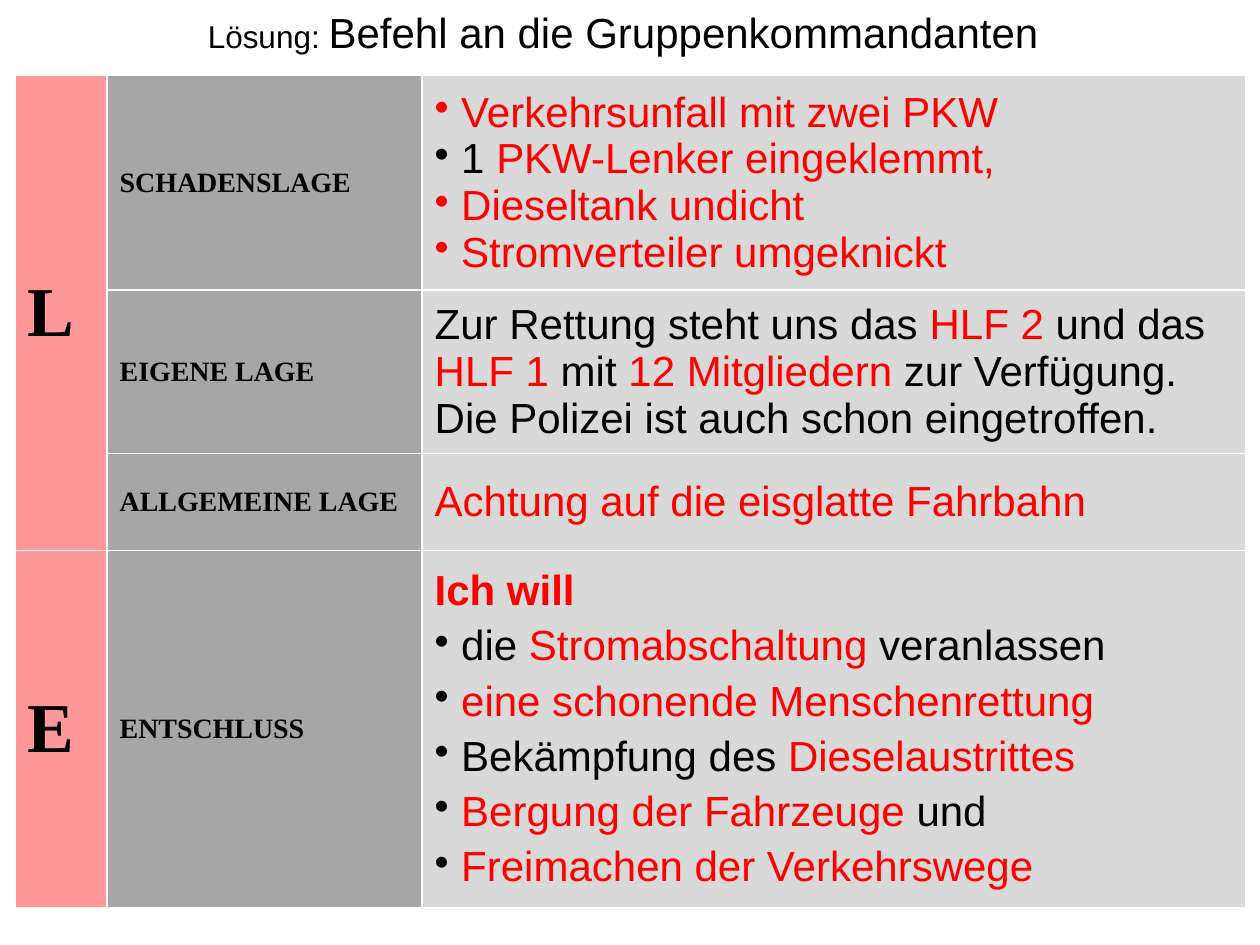
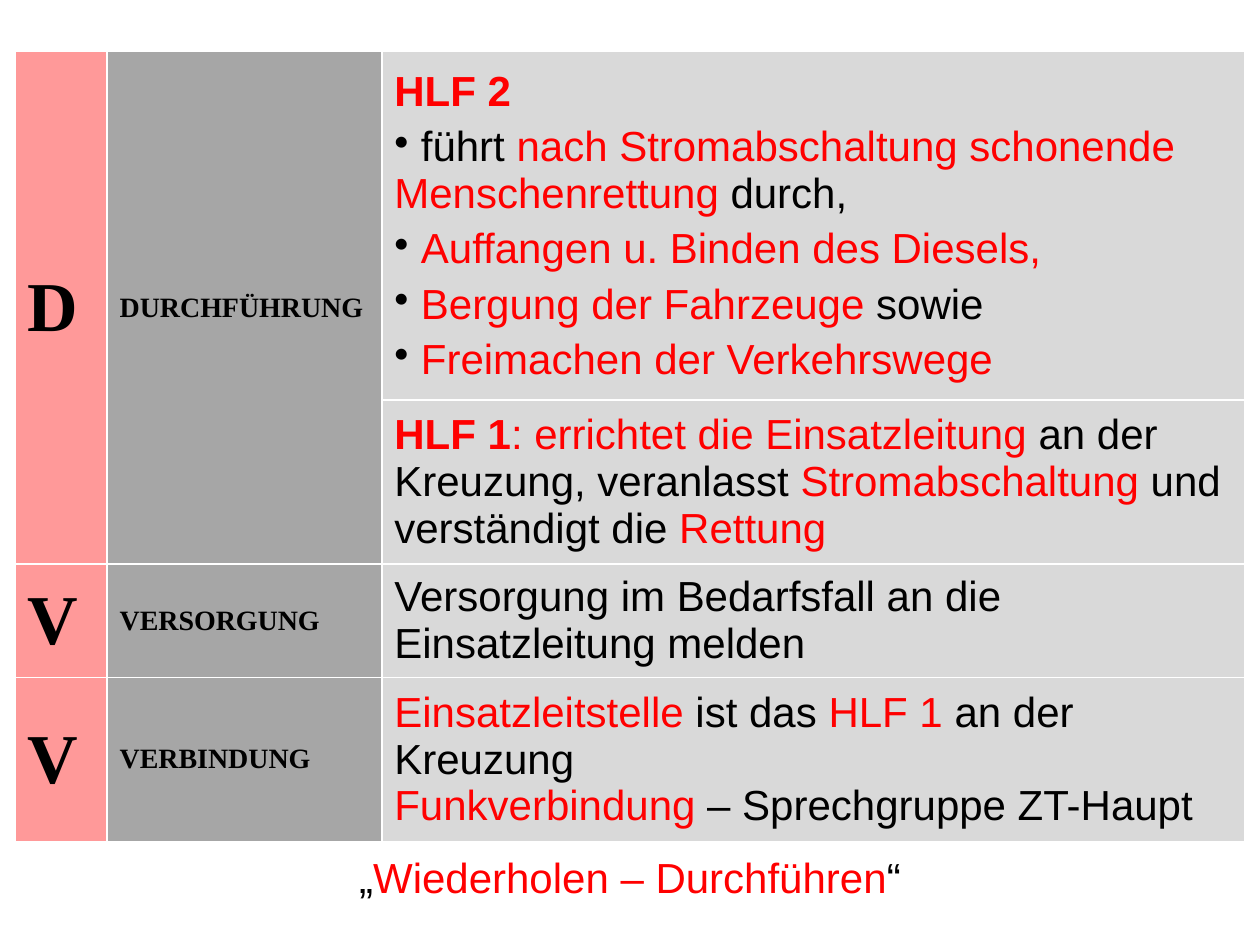
from dataclasses import dataclass

from lxml.etree import SubElement
from pptx import Presentation
from pptx.dml.color import RGBColor
from pptx.enum.text import MSO_ANCHOR, PP_ALIGN
from pptx.oxml import parse_xml
from pptx.oxml.ns import nsdecls, qn
from pptx.util import Inches, Pt


@dataclass(frozen=True)
class Theme:
    black: str = "000000"
    red: str = "FF0000"
    letter_fill: str = "FF9999"
    heading_fill: str = "A6A6A6"
    order_fill: str = "D9D9D9"
    border: str = "FFFFFF"
    border_width: int = Pt(1)
    body_font: str = "Arial"
    heading_font: str = "Times New Roman"
    letter_size: int = Pt(40)
    heading_size: int = Pt(16)
    order_size: int = Pt(24)
    prefix_size: int = Pt(18)
    line_gap: int = Pt(4.8)


@dataclass(frozen=True)
class Line:
    text: str
    bullet: bool = False
    spaced: bool = True


@dataclass(frozen=True)
class Section:
    letter: str
    heading: str
    lines: tuple
    height: float


THEME = Theme()
RED_MARK, BOLD_MARK = "|", "*"

SITUATION = (
    Section("L", "SCHADENSLAGE", (
        Line("| Verkehrsunfall mit zwei PKW", True, False),
        Line(" 1 |PKW-Lenker eingeklemmt,", True, False),
        Line("| Dieseltank undicht", True, False),
        Line("| Stromverteiler umgeknickt", True, False),
    ), 1.7),
    Section("", "EIGENE LAGE", (
        Line("Zur Rettung steht uns das| HLF 2 |und das| HLF 1 |mit| 12 Mitgliedern |"
             "zur Verfügung. Die Polizei ist auch schon eingetroffen."),
    ), 1.3),
    Section("", "ALLGEMEINE LAGE", (
        Line("|Achtung auf die eisglatte Fahrbahn"),
    ), 0.77),
    Section("E", "ENTSCHLUSS", (
        Line("|*Ich will"),
        Line(" die |Stromabschaltung| veranlassen", True),
        Line(" |eine schonende Menschenrettung", True),
        Line(" Bekämpfung des| Dieselaustrittes", True),
        Line(" |Bergung der Fahrzeuge |und", True),
        Line(" |Freimachen der Verkehrswege", True),
    ), 2.82),
)

EXECUTION = (
    Section("D", "DURCHFÜHRUNG", (
        Line("|*HLF 2"),
        Line(" führt| nach Stromabschaltung schonende Menschenrettung| durch,", True),
        Line(" |Auffangen u. Binden des Diesels,", True),
        Line(" |Bergung der Fahrzeuge| sowie", True),
        Line(" |Freimachen der Verkehrswege", True),
    ), 2.76),
    Section("", "", (
        Line("|*HLF 1*: errichtet die Einsatzleitung |an der Kreuzung, veranlasst |"
             "Stromabschaltung| und verständigt die |Rettung", spaced=False),
    ), 1.3),
    Section("V", "VERSORGUNG", (
        Line("Versorgung im Bedarfsfall an die Einsatzleitung melden", spaced=False),
    ), 0.9),
    Section("V", "VERBINDUNG", (
        Line("|Einsatzleitstelle| ist das |HLF 1 |an der Kreuzung"),
        Line("|Funkverbindung |– Sprechgruppe ZT-Haupt", spaced=False),
    ), 1.29),
)


def style_font(font, name, size, bold=False):
    font.name = name
    font.size = size
    font.bold = bold


def add_marked_runs(paragraph, text):
    for part, colored_text in enumerate(text.split(RED_MARK)):
        color = THEME.red if part % 2 else THEME.black
        for piece, phrase in enumerate(colored_text.split(BOLD_MARK)):
            if phrase:
                run = paragraph.add_run()
                run.text = phrase
                run.font.bold = piece % 2 == 1
                run.font.color.rgb = RGBColor.from_string(color)


def write_order(frame, lines):
    for index, line in enumerate(lines):
        paragraph = frame.add_paragraph() if index else frame.paragraphs[0]
        style_font(paragraph.font, THEME.body_font, THEME.order_size)
        if line.spaced:
            paragraph.space_before = THEME.line_gap
        if line.bullet:
            properties = paragraph._p.get_or_add_pPr()
            properties.set("marL", "0")
            properties.set("indent", "0")
            bullet = parse_xml(f'<a:buChar {nsdecls("a")} char="•"/>')
            properties.find(qn("a:defRPr")).addprevious(bullet)
        add_marked_runs(paragraph, line.text)


def write_label(frame, label, size):
    paragraph = frame.paragraphs[0]
    paragraph.text = label
    style_font(paragraph.font, THEME.heading_font, size, True)
    paragraph.font.color.rgb = RGBColor.from_string(THEME.black)


def style_cell(cell, fill):
    cell.fill.solid()
    cell.fill.fore_color.rgb = RGBColor.from_string(fill)
    cell.vertical_anchor = MSO_ANCHOR.MIDDLE
    properties = cell._tc.get_or_add_tcPr()
    for position, side in enumerate(("lnL", "lnR", "lnT", "lnB")):
        border = parse_xml(f'<a:{side} {nsdecls("a")} w="{THEME.border_width}"/>')
        solid = SubElement(border, qn("a:solidFill"))
        SubElement(solid, qn("a:srgbClr"), val=THEME.border)
        properties.insert(position, border)


def merge_down(table, column, labels):
    starts = [row for row, label in enumerate(labels) if label]
    for start, end in zip(starts, starts[1:] + [len(labels)]):
        if end - start > 1:
            table.cell(start, column).merge(table.cell(end - 1, column))


def add_order_table(slide, left, top, column_widths, sections):
    height = sum(section.height for section in sections)
    table = slide.shapes.add_table(
        len(sections), len(column_widths), Inches(left), Inches(top),
        Inches(sum(column_widths)), Inches(height)).table
    table.first_row = table.horz_banding = False
    for column, width in zip(table.columns, column_widths):
        column.width = Inches(width)
    for row, section in enumerate(sections):
        table.rows[row].height = Inches(section.height)
        letter, heading, order = table.rows[row].cells
        style_cell(letter, THEME.letter_fill)
        style_cell(heading, THEME.heading_fill)
        style_cell(order, THEME.order_fill)
        if section.letter:
            write_label(letter.text_frame, section.letter, THEME.letter_size)
        if section.heading:
            write_label(heading.text_frame, section.heading, THEME.heading_size)
        write_order(order.text_frame, section.lines)
    merge_down(table, 0, [section.letter for section in sections])
    merge_down(table, 1, [section.heading for section in sections])


def add_centered_line(slide, left, top, width, height, text):
    frame = slide.shapes.add_textbox(
        Inches(left), Inches(top), Inches(width), Inches(height)).text_frame
    frame.word_wrap = True
    paragraph = frame.paragraphs[0]
    paragraph.alignment = PP_ALIGN.CENTER
    style_font(paragraph.font, THEME.body_font, THEME.order_size)
    add_marked_runs(paragraph, text)
    return paragraph


def build_situation(slide):
    title = add_centered_line(slide, 0.12, 0, 9.65, 0.5, "Lösung: ")
    title.runs[0].font.size = THEME.prefix_size
    add_marked_runs(title, "Befehl an die Gruppenkommandanten")
    add_order_table(slide, 0.12, 0.6, (0.73, 2.5, 6.54), SITUATION)


def build_execution(slide):
    add_centered_line(slide, 0.12, 6.71, 9.76, 0.51, "„|Wiederholen – Durchführen|“")
    add_order_table(slide, 0.12, 0.41, (0.73, 2.18, 6.85), EXECUTION)


def main():
    presentation = Presentation()
    presentation.slide_width = Inches(10)
    presentation.slide_height = Inches(7.5)
    blank = presentation.slide_layouts[6]
    for build in (build_situation, build_execution):
        build(presentation.slides.add_slide(blank))
    presentation.save("out.pptx")


if __name__ == "__main__":
    main()
